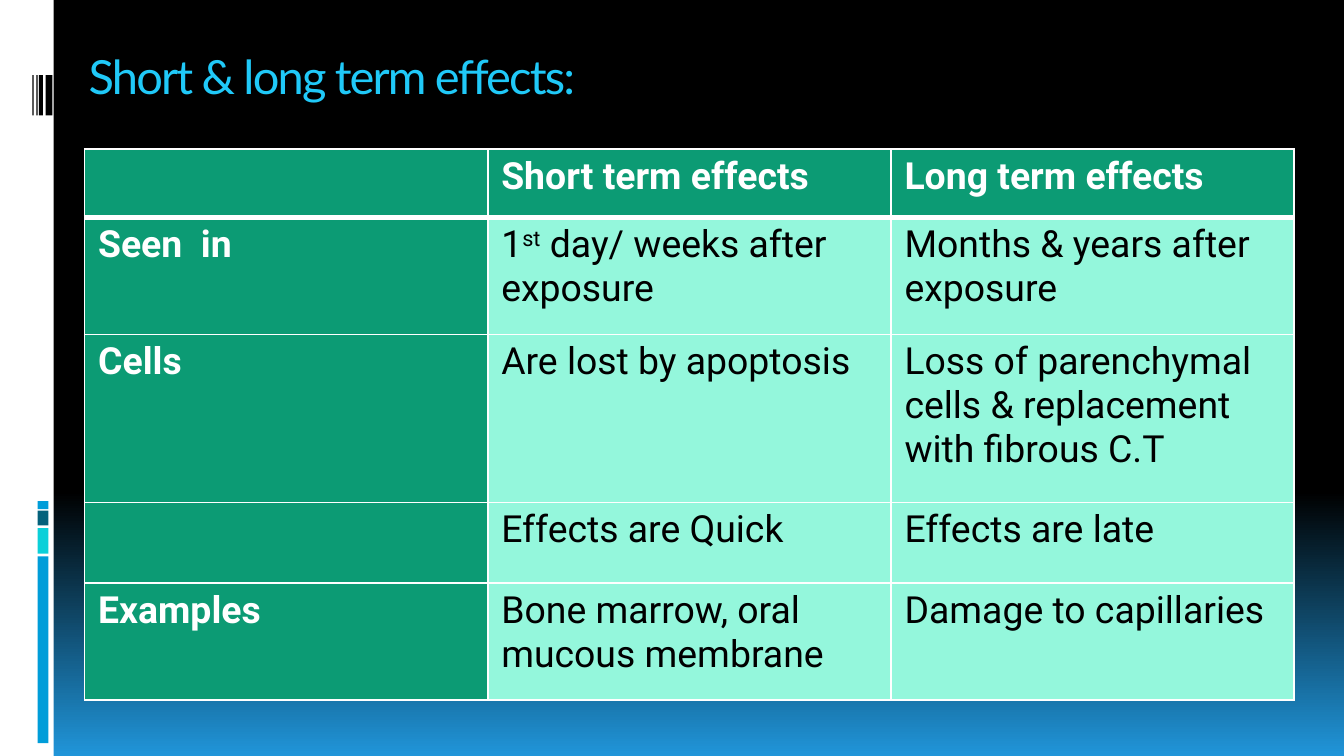
from dataclasses import dataclass

from lxml import etree
from pptx import Presentation
from pptx.dml.color import RGBColor
from pptx.enum.shapes import MSO_SHAPE
from pptx.enum.text import MSO_ANCHOR
from pptx.oxml.ns import qn
from pptx.util import Inches, Pt

RECT = MSO_SHAPE.RECTANGLE
MIDDLE = MSO_ANCHOR.MIDDLE
WIDTH = 10
HEIGHT = WIDTH * 9 / 16


@dataclass(frozen=True)
class Theme:
    black: str = "000000"
    white: str = "FFFFFF"
    sky: str = "2095D9"
    blue: str = "009DD9"
    cyan: str = "0BD0D9"
    petrol: str = "04617B"
    title: str = "20C9F8"
    green: str = "0C9B74"
    mint: str = "94F7DC"
    title_font: str = "Lato"
    body_font: str = "Roboto"
    title_size: float = 25.2
    body_size: float = 20


def rgb(value):
    return RGBColor.from_string(value)


def add_text(tf, text, *, font, size, color, bold=False, **attrs):
    r = tf.paragraphs[0].add_run()
    r.text = text
    r.font.name, r.font.size, r.font.bold = font, Pt(size), bold
    r.font.color.rgb = rgb(color)
    for name, value in attrs.items():
        r._r.get_or_add_rPr().set(name, str(value))


class Deck:
    """Draws styled elements on the current slide."""

    def __init__(self, prs, theme):
        self.theme = theme
        self.s = prs.slides.add_slide(prs.slide_layouts[6])

    def background(self, start, end, hold):
        fill = self.s.background.fill
        fill.gradient()
        fill.gradient_angle = 270
        for stop, color, position in zip(fill.gradient_stops, (start, end), (hold, 1)):
            stop.color.rgb = rgb(color)
            stop.position = position

    def bar(self, x, y, w, h, color):
        sp = self.s.shapes.add_shape(RECT, Inches(x), Inches(y), Inches(w), Inches(h))
        sp.shadow.inherit = False
        sp.fill.solid()
        sp.fill.fore_color.rgb = rgb(color)
        sp.line.fill.background()

    def title(self, text, x, y, w, h):
        t = self.theme
        tf = self.s.shapes.add_textbox(Inches(x), Inches(y), Inches(w), Inches(h)).text_frame
        tf.word_wrap = True
        tf.vertical_anchor = MIDDLE
        tf.margin_left = Inches(0.19)
        add_text(tf, text, font=t.title_font, size=t.title_size, color=t.title, spc=-100)

    def border(self, cell, **widths):
        tc_pr = cell._tc.get_or_add_tcPr()
        for side, width in widths.items():
            ln = etree.SubElement(tc_pr, qn(f"a:ln{side}"), w=str(Pt(width)))
            fill = etree.SubElement(ln, qn("a:solidFill"))
            etree.SubElement(fill, qn("a:srgbClr"), val=self.theme.white)

    def cell(self, cell, parts, row, col):
        t = self.theme
        heading = row == 0 or col == 0
        cell.margin_left = cell.margin_right = Inches(0.1)
        cell.margin_top = cell.margin_bottom = Inches(0.04)
        self.border(cell, L=1, R=1, T=3 if row == 1 else 1, B=3 if row == 0 else 1)
        cell.fill.solid()
        cell.fill.fore_color.rgb = rgb(t.green if heading else t.mint)
        for text, attrs in parts:
            add_text(cell.text_frame, text, font=t.body_font, size=t.body_size,
                     color=t.white if heading else t.black, bold=heading, **attrs)

    def table(self, rows, x, y, widths, heights):
        table = self.s.shapes.add_table(len(rows), len(widths), Inches(x), Inches(y),
                                        Inches(sum(widths)), Inches(sum(heights))).table
        for column, width in zip(table.columns, widths):
            column.width = Inches(width)
        for i, (height, row) in enumerate(zip(heights, rows)):
            table.rows[i].height = Inches(height)
            for j, value in enumerate(row):
                parts = [(value, {})] if isinstance(value, str) and value else value
                self.cell(table.cell(i, j), parts, i, j)


def main():
    prs = Presentation()
    prs.slide_width, prs.slide_height = Inches(WIDTH), Inches(HEIGHT)
    t = Theme()
    deck = Deck(prs, t)
    deck.background(t.black, t.sky, 0.65)

    deck.bar(0, 0, 0.4, HEIGHT, t.white)
    for y, h, color in ((4.14, 1.39, t.blue), (3.93, 0.19, t.cyan),
                        (3.8, 0.11, t.petrol), (3.73, 0.06, t.blue)):
        deck.bar(0.28, y, 0.08, h, color)
    for x, w in ((0.34, 0.05), (0.29, 0.03), (0.27, 0.01), (0.24, 0.01)):
        deck.bar(x, 0.56, w, 0.3, t.black)

    deck.title("Short & long term effects:", 0.47, 0.29, 9, 0.55)
    first_day = [("1", {}), ("st", {"baseline": 30000}), (" day/ weeks after exposure", {})]
    rows = [
        ("", "Short term effects", "Long term effects"),
        ("Seen  in", first_day, "Months & years after exposure"),
        ("Cells", "Are lost by apoptosis",
         "Loss of parenchymal cells & replacement with fibrous C.T"),
        ("", "Effects are Quick", "Effects are late"),
        ("Examples", "Bone marrow, oral mucous membrane", "Damage to capillaries"),
    ]
    deck.table(rows, 0.63, 1.11, [3] * 3, [0.51, 0.87, 1.25, 0.6, 0.87])
    prs.save("out.pptx")


if __name__ == "__main__":
    main()
